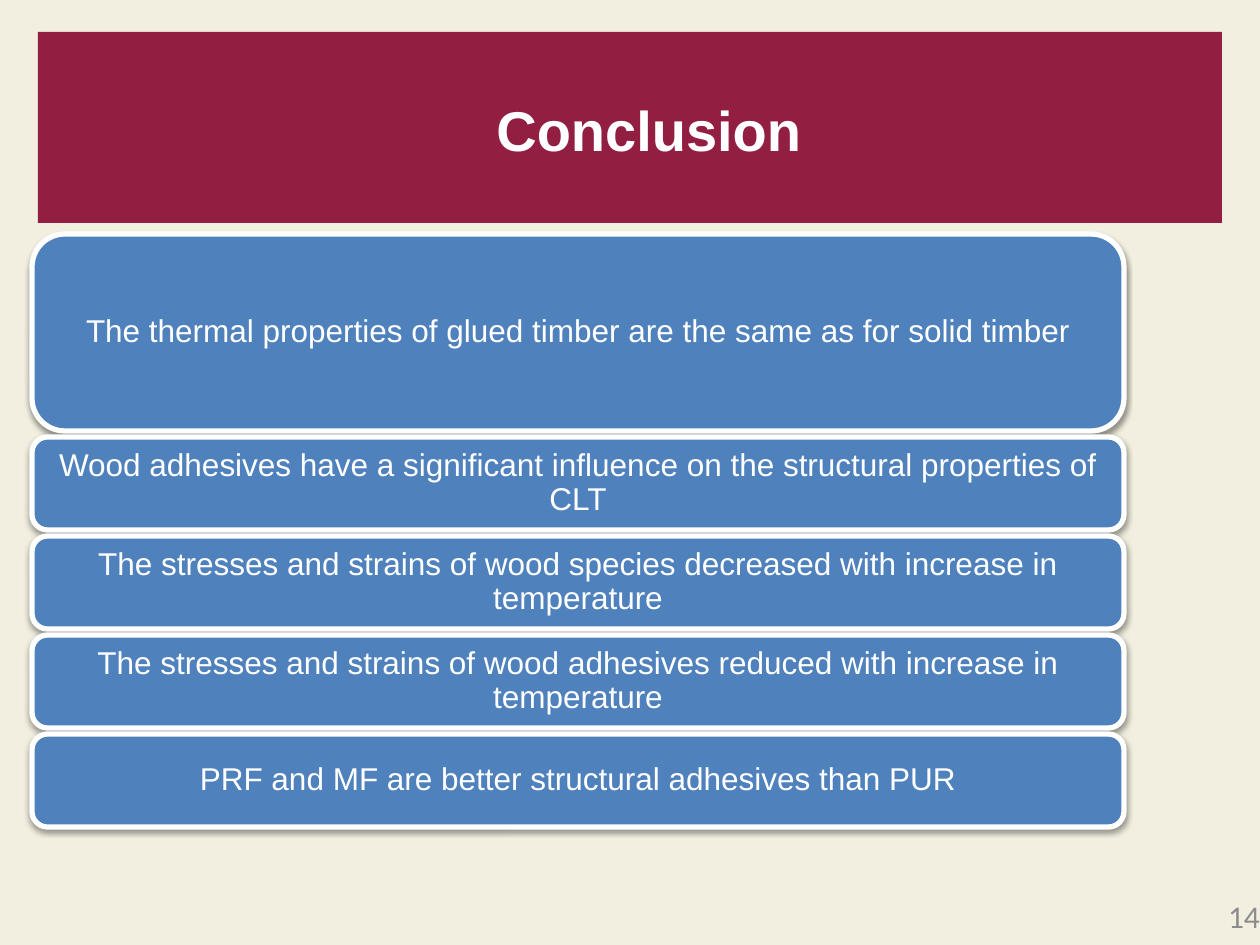
from dataclasses import dataclass

import pptx
import pptx.dml.color
import pptx.enum.shapes
import pptx.enum.text
import pptx.oxml
import pptx.oxml.ns
import pptx.util

RGBColor = pptx.dml.color.RGBColor
PP_ALIGN = pptx.enum.text.PP_ALIGN
MSO_ANCHOR = pptx.enum.text.MSO_ANCHOR

CREAM = RGBColor(0xF2, 0xEF, 0xE0)
CRIMSON = RGBColor(0x92, 0x1E, 0x42)
BLUE = RGBColor(0x4F, 0x81, 0xBD)
WHITE = RGBColor(0xFF, 0xFF, 0xFF)
GREY = RGBColor(0x8C, 0x8C, 0x8C)

PX_PER_INCH = 126
BAR_LEFT, BAR_TOP, BAR_WIDTH = 32, 234, 1092
BAR_GAP = 6
BAR_INSET = 9

SHADOW = (
    f'<a:outerShdw {pptx.oxml.ns.nsdecls("a")} blurRad="40000" dist="20000" '
    'dir="5400000" rotWithShape="0"><a:srgbClr val="000000">'
    '<a:alpha val="38000"/></a:srgbClr></a:outerShdw>'
)


@dataclass
class Finding:
    text: str
    height: int = 93


@dataclass
class TextStyle:
    size: int
    color: RGBColor
    align: PP_ALIGN
    font: str = "Arial"
    bold: bool = False


FINDINGS = [
    Finding("The thermal properties of glued timber are the same as for solid timber", 197),
    Finding("Wood adhesives have a significant influence on the structural properties of CLT"),
    Finding("The stresses and strains of wood species decreased with increase in temperature"),
    Finding("The stresses and strains of wood adhesives reduced with increase in temperature"),
    Finding("PRF and MF are better structural adhesives than PUR"),
]

TITLE_STYLE = TextStyle(32, WHITE, PP_ALIGN.CENTER, bold=True)
FINDING_STYLE = TextStyle(18, WHITE, PP_ALIGN.CENTER)
NUMBER_STYLE = TextStyle(18, GREY, PP_ALIGN.RIGHT, font="Calibri")


def px(length: int) -> pptx.util.Emu:
    return pptx.util.Emu(round(length * 914400 / PX_PER_INCH))


def write(shape, text: str, style: TextStyle, anchor: MSO_ANCHOR,
          insets: tuple[int, int, int, int] = (0, 0, 0, 0)) -> None:
    frame = shape.text_frame
    frame.text = text
    frame.word_wrap = True
    frame.auto_size = pptx.enum.text.MSO_AUTO_SIZE.NONE
    frame.vertical_anchor = anchor
    (frame.margin_left, frame.margin_top,
     frame.margin_right, frame.margin_bottom) = map(px, insets)
    para = frame.paragraphs[0]
    para.alignment = style.align
    font = para.runs[0].font
    font.name = style.font
    font.size = pptx.util.Pt(style.size)
    font.bold = style.bold
    font.color.rgb = style.color


def draw_title(page, text: str) -> None:
    title = page.shapes.title
    title.left, title.top, title.width, title.height = map(px, (38, 32, 1184, 191))
    title.fill.solid()
    title.fill.fore_color.rgb = CRIMSON
    write(title, text, TITLE_STYLE, MSO_ANCHOR.TOP, (38, 63, 0, 0))


def draw_finding(page, finding: Finding, top: int) -> None:
    bar = page.shapes.add_shape(
        pptx.enum.shapes.MSO_SHAPE.ROUNDED_RECTANGLE,
        px(BAR_LEFT), px(top), px(BAR_WIDTH), px(finding.height))
    bar.fill.solid()
    bar.fill.fore_color.rgb = BLUE
    bar.line.color.rgb = WHITE
    bar.line.width = pptx.util.Pt(3)
    bar.shadow.inherit = False
    effects = bar.element.spPr.find(pptx.oxml.ns.qn("a:effectLst"))
    effects.append(pptx.oxml.parse_xml(SHADOW))
    write(bar, finding.text, FINDING_STYLE, MSO_ANCHOR.MIDDLE, (BAR_INSET,) * 4)
    bar.text_frame.paragraphs[0].line_spacing = 0.9


def main() -> None:
    deck = pptx.Presentation()
    deck.slide_width, deck.slide_height = px(1260), px(945)
    page = deck.slides.add_slide(deck.slide_layouts[5])
    page.background.fill.solid()
    page.background.fill.fore_color.rgb = CREAM

    draw_title(page, "Conclusion")
    top = BAR_TOP
    for finding in FINDINGS:
        draw_finding(page, finding, top)
        top += finding.height + BAR_GAP

    number = page.shapes.add_textbox(*map(px, (970, 897, 290, 48)))
    write(number, "14", NUMBER_STYLE, MSO_ANCHOR.TOP)
    deck.save("out.pptx")


if __name__ == "__main__":
    main()
